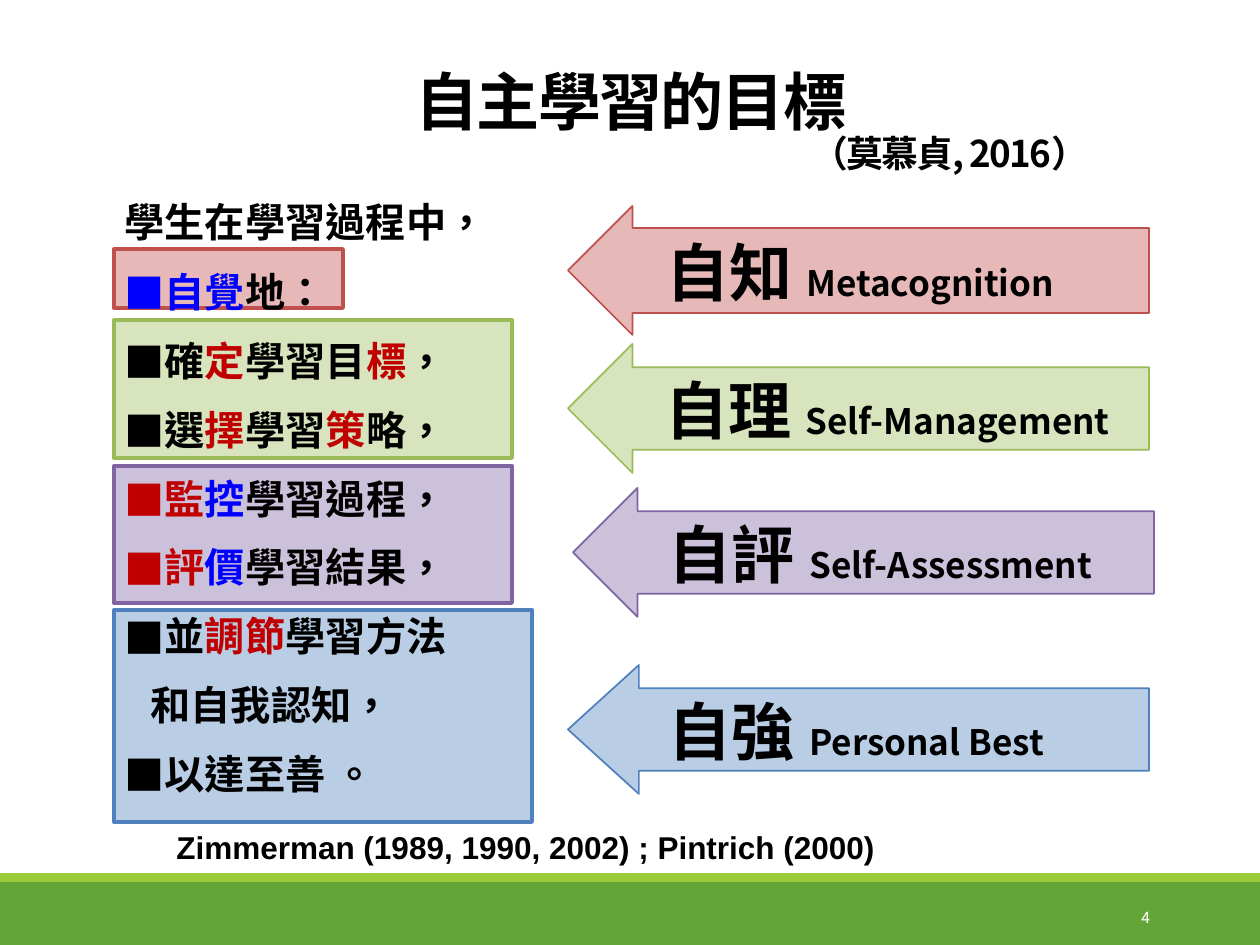
from lxml.etree import SubElement
from pptx import Presentation
from pptx.dml.color import RGBColor
from pptx.enum.lang import MSO_LANGUAGE_ID as LANG
from pptx.enum.shapes import MSO_SHAPE as SHAPE
from pptx.enum.text import MSO_ANCHOR as ANCHOR, PP_ALIGN as ALIGN
from pptx.oxml.ns import qn
from pptx.util import Pt

PX = 914400 / 126
CJK = "Noto Sans CJK SC"
BLACK, RED, BLUE, WHITE = "000000", "C00000", "0000FF", "FFFFFF"
ROSE, GREEN = ("E6B9B8", "C0504D"), ("D7E4BD", "9BBB59")
PURPLE, SKY = ("CCC1DA", "8064A2"), ("B9CDE5", "4F81BD")

BARS = [(0, 882, 1260, 63, "63A537"), (0, 873, 1260, 9, "99CB38")]
PANELS = [
    (114, 610, 418, 212, SKY),
    (114, 466, 398, 137, PURPLE),
    (114, 320, 398, 138, GREEN),
    (114, 249, 229, 59, ROSE),
]
# arrow left, arrow top, shaft ratio, head ratio, label left, colours, words
ARROWS = [
    (568, 206, 0.66, 0.5, 611, ROSE, "自知 ", "Metacognition"),
    (568, 344, 0.64, 0.5, 610, GREEN, "自理 ", "Self-Management"),
    (573, 488, 0.64, 0.5, 614, PURPLE, "自評 ", "Self-Assessment"),
    (568, 665, 0.64, 0.55, 614, SKY, "自強 ", "Personal Best"),
]
GOALS = [
    [("自覺", BLUE), ("地：", BLACK)],
    [("確", BLACK), ("定", RED), ("學習目", BLACK), ("標", RED), ("，", BLACK)],
    [("選", BLACK), ("擇", RED), ("學習", BLACK), ("策", RED), ("略，", BLACK)],
    [("監", RED), ("控", BLUE), ("學習過程，", BLACK)],
    [("評", RED), ("價", BLUE), ("學習結果，", BLACK)],
    [("並", BLACK), ("調節", RED), ("學習方法", BLACK)],
    [("和自我認知，", BLACK)],
    [("以達至善 。", BLACK)],
]
CONTINUATION = 6


def px(n):
    return round(n * PX)


def rgb(value):
    return RGBColor.from_string(value)


def add_block(slide, kind, box, fill, line=None, width=1):
    sp = slide.shapes.add_shape(kind, *map(px, box))
    sp.shadow.inherit = False
    sp.fill.solid()
    sp.fill.fore_color.rgb = rgb(fill)
    if line:
        sp.line.color.rgb = rgb(line)
        sp.line.width = Pt(width)
    else:
        sp.line.fill.background()
    return sp


def add_text_box(slide, box, inset=None, anchor=ANCHOR.TOP):
    tf = slide.shapes.add_textbox(*map(px, box)).text_frame
    tf.word_wrap = True
    tf.vertical_anchor = anchor
    if inset is not None:
        for side in ("left", "top", "right", "bottom"):
            setattr(tf, f"margin_{side}", px(inset))
    return tf


def add_paragraph(tf, first=False, indents=None, bullet=None, **formats):
    """Indents maps marL, marR and indent to px; formats are paragraph attributes."""
    p = tf.paragraphs[0] if first else tf.add_paragraph()
    pPr = p._p.get_or_add_pPr()
    for name, value in (indents or {}).items():
        pPr.set(name, str(px(value)))
    if bullet:
        SubElement(pPr, qn("a:buFont"), typeface=CJK)
        SubElement(pPr, qn("a:buChar"), char=bullet)
    for name, value in formats.items():
        setattr(p, name, value)
    return p


def add_run(p, text, size, color=BLACK, font=CJK, bold=True, spacing=None):
    r = p.add_run()
    r.text = text
    for name, value in {"size": Pt(size), "bold": bold, "name": font}.items():
        setattr(r.font, name, value)
    r.font.color.rgb = rgb(color)
    rPr = r._r.get_or_add_rPr()
    if font == CJK:
        r.font.language_id = LANG.TAIWAN if hasattr(LANG, "TAIWAN") else LANG.CHINESE_HONG_KONG_SAR
        SubElement(rPr, qn("a:ea"), typeface=CJK)
    if spacing:
        rPr.set("spc", str(spacing))


def add_arrow(slide, left, top, shaft, head, label_left, colors, name, english):
    sp = add_block(slide, SHAPE.LEFT_ARROW, (left, top, 581, 129), *colors)
    sp.adjustments[0], sp.adjustments[1] = shaft, head
    tf = add_text_box(slide, (label_left, top + 15, 538, 100), 6, ANCHOR.MIDDLE)
    p = add_paragraph(tf, first=True, indents={"marL": 0, "indent": 49})
    add_run(p, name, 36)
    add_run(p, english, 20)


def add_goals(slide):
    tf = add_text_box(slide, (112, 197, 993, 760))
    p = add_paragraph(tf, first=True, line_spacing=0.9)
    add_run(p, "學生在學習過程中，", 23)
    for i, parts in enumerate(GOALS):
        if i == CONTINUATION:
            layout = {"indents": {"marL": 26, "indent": 0}}
        else:
            layout = {"indents": {"marL": 35, "indent": -35}, "bullet": "■"}
        p = add_paragraph(tf, line_spacing=1.1, space_before=Pt(9), **layout)
        for text, color in parts:
            add_run(p, text, 23, color)


def add_title(slide):
    tf = add_text_box(slide, (84, 55, 1094, 139), 6, ANCHOR.MIDDLE)
    p = add_paragraph(tf, first=True, alignment=ALIGN.CENTER, line_spacing=0.85)
    add_run(p, "自主學習的目標", 36, spacing=-100)
    p = add_paragraph(tf, indents={"marR": 84}, alignment=ALIGN.RIGHT, line_spacing=0.85)
    add_run(p, "（莫慕貞, 2016）", 21, spacing=-100)


def add_footer(slide):
    tf = add_text_box(slide, (38, 822, 1048, 50))
    p = add_paragraph(tf, first=True, indents={"marL": 126, "indent": 0})
    add_run(p, "Zimmerman (1989, 1990, 2002) ; Pintrich (2000)", 18, font="Arial")
    tf = add_text_box(slide, (1126, 900, 32, 31), 8)
    p = add_paragraph(tf, first=True, alignment=ALIGN.RIGHT)
    add_run(p, "4", 9, WHITE, "Roboto", bold=False)


def main():
    prs = Presentation()
    prs.slide_width, prs.slide_height = px(1260), px(945)
    slide = prs.slides.add_slide(prs.slide_layouts[6])
    for *box, fill in BARS:
        add_block(slide, SHAPE.RECTANGLE, box, fill)
    for *box, colors in PANELS:
        add_block(slide, SHAPE.RECTANGLE, box, *colors, width=2.25)
    for arrow in ARROWS:
        add_arrow(slide, *arrow)
    add_goals(slide)
    add_footer(slide)
    add_title(slide)
    prs.save("out.pptx")


if __name__ == "__main__":
    main()
